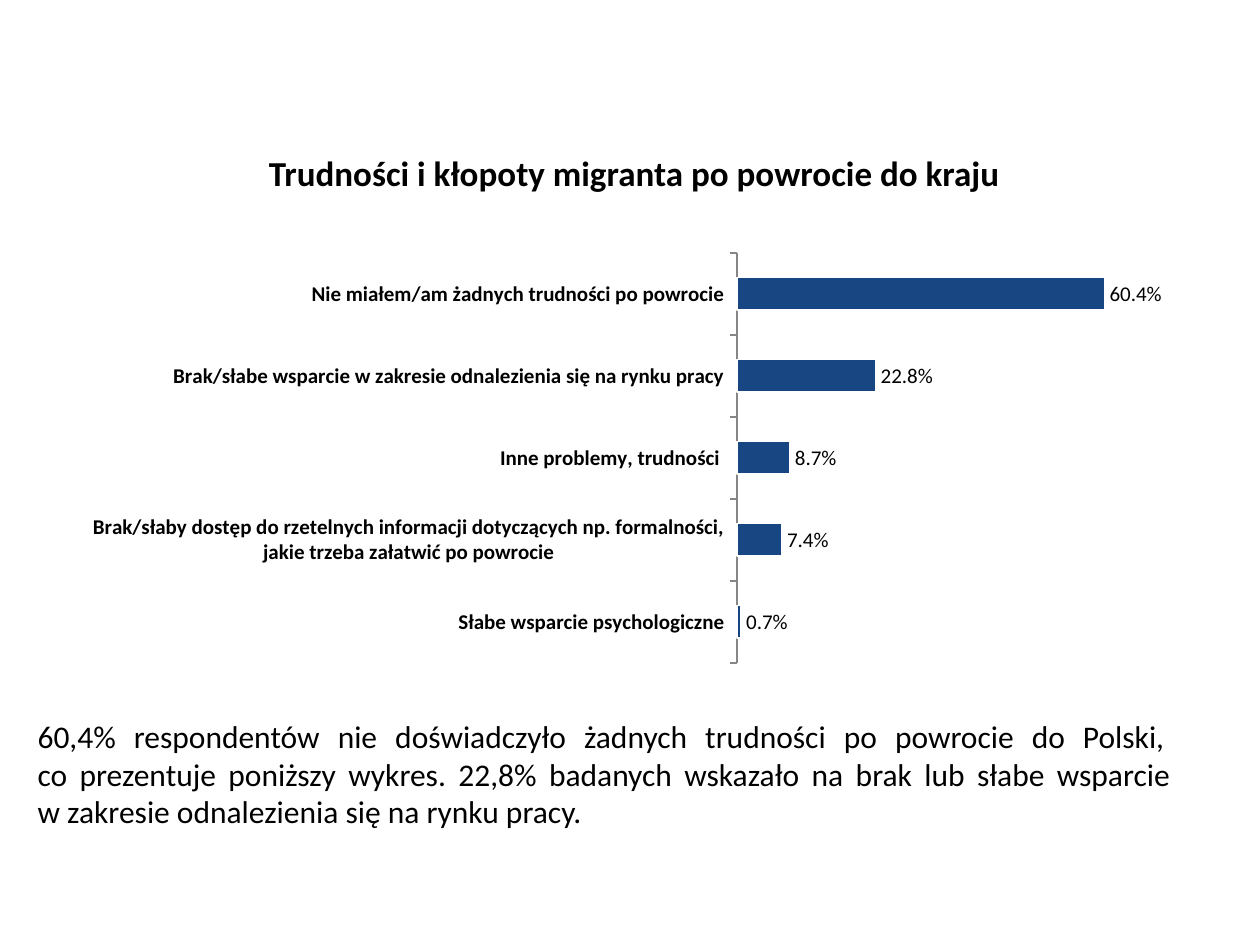
from dataclasses import dataclass

from lxml.etree import SubElement
from pptx import Presentation
from pptx.chart.data import CategoryChartData
from pptx.dml.color import RGBColor
from pptx.enum.chart import XL_CHART_TYPE as ChartType
from pptx.enum.chart import XL_LABEL_POSITION as LabelPos
from pptx.enum.chart import XL_TICK_MARK as Tick
from pptx.enum.text import PP_ALIGN as Align
from pptx.oxml.ns import qn
from pptx.util import Pt


@dataclass(frozen=True)
class Theme:
    font: str = "Calibri"
    ink: RGBColor = RGBColor(0, 0, 0)
    bar: RGBColor = RGBColor(0x18, 0x46, 0x83)
    bar_edge: RGBColor = RGBColor(0xFF, 0xFF, 0xFF)
    axis: RGBColor = RGBColor(0x86, 0x86, 0x86)
    title_size: int = 20
    body_size: int = 18
    label_size: int = 12


@dataclass(frozen=True)
class Box:
    left: float
    top: float
    width: float
    height: float

    def lengths(self):
        return Pt(self.left), Pt(self.top), Pt(self.width), Pt(self.height)


@dataclass(frozen=True)
class TextBlock:
    box: Box
    text: str
    size: int
    align: Align
    bold: bool = False


THEME = Theme()
PERCENT = "0.0%"

TEXTS = [
    TextBlock(Box(25.2, 82.8, 674.6, 31.7),
              "Trudności i kłopoty migranta po powrocie do kraju",
              THEME.title_size, Align.CENTER, bold=True),
    TextBlock(Box(14.4, 406.1, 668.9, 72.7),
              "60,4% respondentów nie doświadczyło żadnych trudności po powrocie do Polski, \v"
              "co prezentuje poniższy wykres. 22,8% badanych wskazało na brak lub słabe wsparcie \v"
              "w zakresie odnalezienia się na rynku pracy. ",
              THEME.body_size, Align.JUSTIFY),
]

CHART_BOX = Box(36.7, 139.7, 640.8, 244.1)
PLOT_LAYOUT = {"x": 0.6, "y": 0.02, "w": 0.38, "h": 0.96}
DIFFICULTIES = {
    "Słabe wsparcie psychologiczne": 0.007,
    "Brak/słaby dostęp do rzetelnych informacji dotyczących np. formalności, "
    "jakie trzeba załatwić po powrocie": 0.074,
    "Inne problemy, trudności ": 0.087,
    "Brak/słabe wsparcie w zakresie odnalezienia się na rynku pracy": 0.228,
    "Nie miałem/am żadnych trudności po powrocie": 0.604,
}


def style_font(font, size: int, bold: bool = False) -> None:
    font.name = THEME.font
    font.size = Pt(size)
    font.bold = bold
    font.color.rgb = THEME.ink


def add_text(s, block: TextBlock) -> None:
    tf = s.shapes.add_textbox(*block.box.lengths()).text_frame
    tf.word_wrap = True
    p = tf.paragraphs[0]
    p.text = block.text
    p.alignment = block.align
    for r in p.runs:
        style_font(r.font, block.size, block.bold)


def fix_plot_area(chart) -> None:
    """Pin the inner plot area to fractions of the chart frame."""
    plot_area = chart.plots[0]._element.getparent()
    layout = plot_area.find(qn("c:layout"))
    if layout is None:
        layout = SubElement(plot_area, qn("c:layout"))
        plot_area.insert(0, layout)
    manual = SubElement(layout, qn("c:manualLayout"))
    settings = {"layoutTarget": "inner", "xMode": "edge", "yMode": "edge", **PLOT_LAYOUT}
    for name, value in settings.items():
        SubElement(manual, qn(f"c:{name}")).set("val", str(value))


def add_difficulties_chart(s) -> None:
    data = CategoryChartData(number_format=PERCENT)
    data.categories = list(DIFFICULTIES)
    data.add_series("Series 1", list(DIFFICULTIES.values()))
    chart = s.shapes.add_chart(ChartType.BAR_CLUSTERED, *CHART_BOX.lengths(), data).chart
    chart.has_legend = False
    chart.has_title = False
    style_font(chart.font, THEME.label_size)
    fix_plot_area(chart)

    categories = chart.category_axis
    categories.major_tick_mark = Tick.OUTSIDE
    categories.format.line.color.rgb = THEME.axis
    style_font(categories.tick_labels.font, THEME.label_size, bold=True)

    values = chart.value_axis
    values.visible = False
    values.has_major_gridlines = False
    values.minimum_scale, values.maximum_scale = 0, 0.7
    values.tick_labels.number_format = PERCENT
    values.tick_labels.number_format_is_linked = False

    plot = chart.plots[0]
    plot.gap_width = 150
    plot.vary_by_categories = False
    bars = plot.series[0].format
    bars.fill.solid()
    bars.fill.fore_color.rgb = THEME.bar
    bars.line.color.rgb = THEME.bar_edge
    bars.line.width = Pt(1)

    plot.has_data_labels = True
    labels = plot.data_labels
    labels.show_value = True
    labels.position = LabelPos.OUTSIDE_END
    labels.number_format = PERCENT
    labels.number_format_is_linked = False
    style_font(labels.font, THEME.label_size)


def main() -> None:
    prs = Presentation()
    prs.slide_width, prs.slide_height = Pt(720), Pt(540)
    s = prs.slides.add_slide(prs.slide_layouts[6])
    for block in TEXTS:
        add_text(s, block)
    add_difficulties_chart(s)
    prs.save("out.pptx")


if __name__ == "__main__":
    main()
